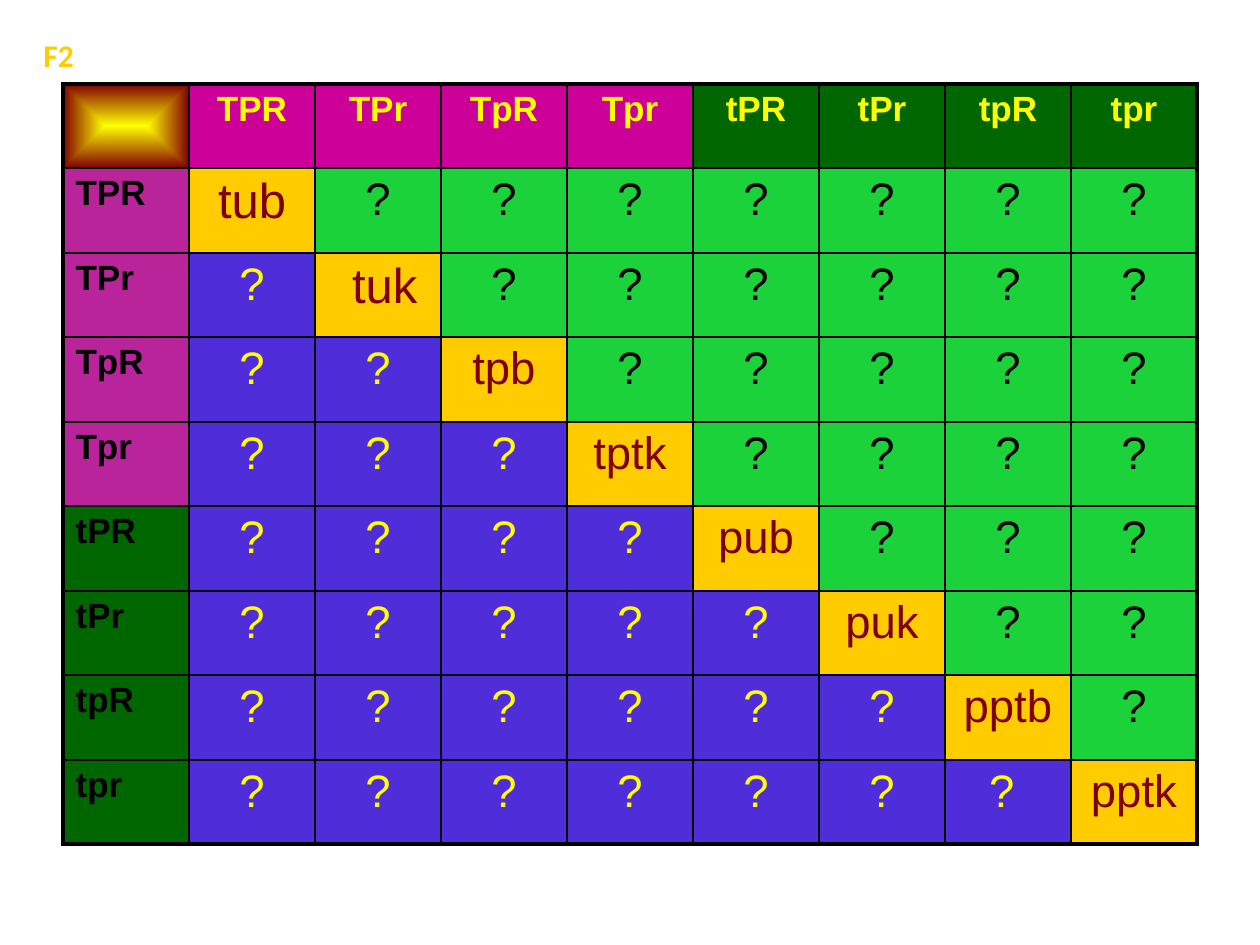
from lxml import etree
from pptx import Presentation
from pptx.dml.color import RGBColor
from pptx.enum.text import MSO_AUTO_SIZE, PP_ALIGN
from pptx.oxml import parse_xml
from pptx.oxml.ns import qn
from pptx.util import Pt

LEFT, CENTER = PP_ALIGN.LEFT, PP_ALIGN.CENTER
GROW = MSO_AUTO_SIZE.SHAPE_TO_FIT_TEXT
DRAWING_NS = "http://schemas.openxmlformats.org/drawingml/2006/main"
SCALE = 914400 / 126

THEME = {
    "font": "Arial", "caption_font": "Calibri",
    "heading_size": 20, "caption_size": 18, "mark_size": 26, "large_size": 28,
    "black": "000000", "yellow": "FFFF00", "maroon": "800000", "gold": "FFCC00",
    "magenta": "CC0099", "plum": "BA249A", "dark_green": "006600",
    "green": "1CD23A", "blue": "4F2EDA",
    "thin": 1, "thick": 2.25,
}


def px(value):
    return round(value * SCALE)


def write(frame, text, size, color, font=THEME["font"], bold=False, align=LEFT):
    para = frame.paragraphs[0]
    para.alignment = align
    span = para.add_run()
    span.text = text
    span.font.name = font
    span.font.size = Pt(size)
    span.font.bold = bold
    span.font.color.rgb = RGBColor.from_string(color)


deck = Presentation()
deck.slide_width, deck.slide_height = px(1260), px(945)
page = deck.slides.add_slide(deck.slide_layouts[6])

gametes = ["TPR", "TPr", "TpR", "Tpr", "tPR", "tPr", "tpR", "tpr"]
diagonal = ["tub", " tuk", "tpb", "tptk", "pub", "puk", "pptb", "pptk"]
count = len(gametes) + 1
last = count - 1
table_height = 760

table = page.shapes.add_table(count, count, px(63), px(84), px(1134), px(table_height)).table
table.first_row = False
table.horz_banding = False
for column in table.columns:
    column.width = px(126)
edges = [round(table_height * index / count) for index in range(count + 1)]
for index, row in enumerate(table.rows):
    row.height = px(edges[index + 1] - edges[index])

for row in range(count):
    for column in range(count):
        cell = table.cell(row, column)
        properties = cell._tc.get_or_add_tcPr()
        outer_sides = {"lnL": column == 0, "lnR": column == last,
                       "lnT": row == 0, "lnB": row == last}
        for side, outer in outer_sides.items():
            width = THEME["thick"] if outer else THEME["thin"]
            border = etree.SubElement(properties, qn("a:" + side), w=str(Pt(width)))
            solid = etree.SubElement(border, qn("a:solidFill"))
            etree.SubElement(solid, qn("a:srgbClr"), val=THEME["black"])

        if row == column == 0:
            properties.append(parse_xml(
                f'<a:gradFill xmlns:a="{DRAWING_NS}" rotWithShape="1"><a:gsLst>'
                f'<a:gs pos="0"><a:srgbClr val="{THEME["yellow"]}"/></a:gs>'
                f'<a:gs pos="100000"><a:srgbClr val="{THEME["maroon"]}"/></a:gs>'
                '</a:gsLst><a:path path="shape">'
                '<a:fillToRect l="50000" t="50000" r="50000" b="50000"/>'
                '</a:path></a:gradFill>'))
            continue

        heading = row == 0 or column == 0
        size = THEME["heading_size"] if heading else THEME["mark_size"]
        align = LEFT if column == 0 else CENTER
        if row == 0:
            text, color = gametes[column - 1], THEME["yellow"]
            fill = THEME["magenta"] if column <= 4 else THEME["dark_green"]
        elif column == 0:
            text, color = gametes[row - 1], THEME["black"]
            fill = THEME["plum"] if row <= 4 else THEME["dark_green"]
        elif row == column:
            text, color, fill = diagonal[row - 1], THEME["maroon"], THEME["gold"]
            size = THEME["large_size"] if row <= 2 else size
        elif row < column:
            text, color, fill = "?", THEME["black"], THEME["green"]
        else:
            text, color, fill = "?", THEME["yellow"], THEME["blue"]
            if (row, column) == (last, last - 1):
                text = "? "
        cell.fill.solid()
        cell.fill.fore_color.rgb = RGBColor.from_string(fill)
        write(cell.text_frame, text, size, color, bold=heading, align=align)

caption = page.shapes.add_textbox(px(31), px(30), px(105), px(50))
caption.text_frame.word_wrap = True
caption.text_frame.auto_size = GROW
write(caption.text_frame, "F2", THEME["caption_size"], THEME["gold"],
      font=THEME["caption_font"], bold=True)

deck.save("out.pptx")
